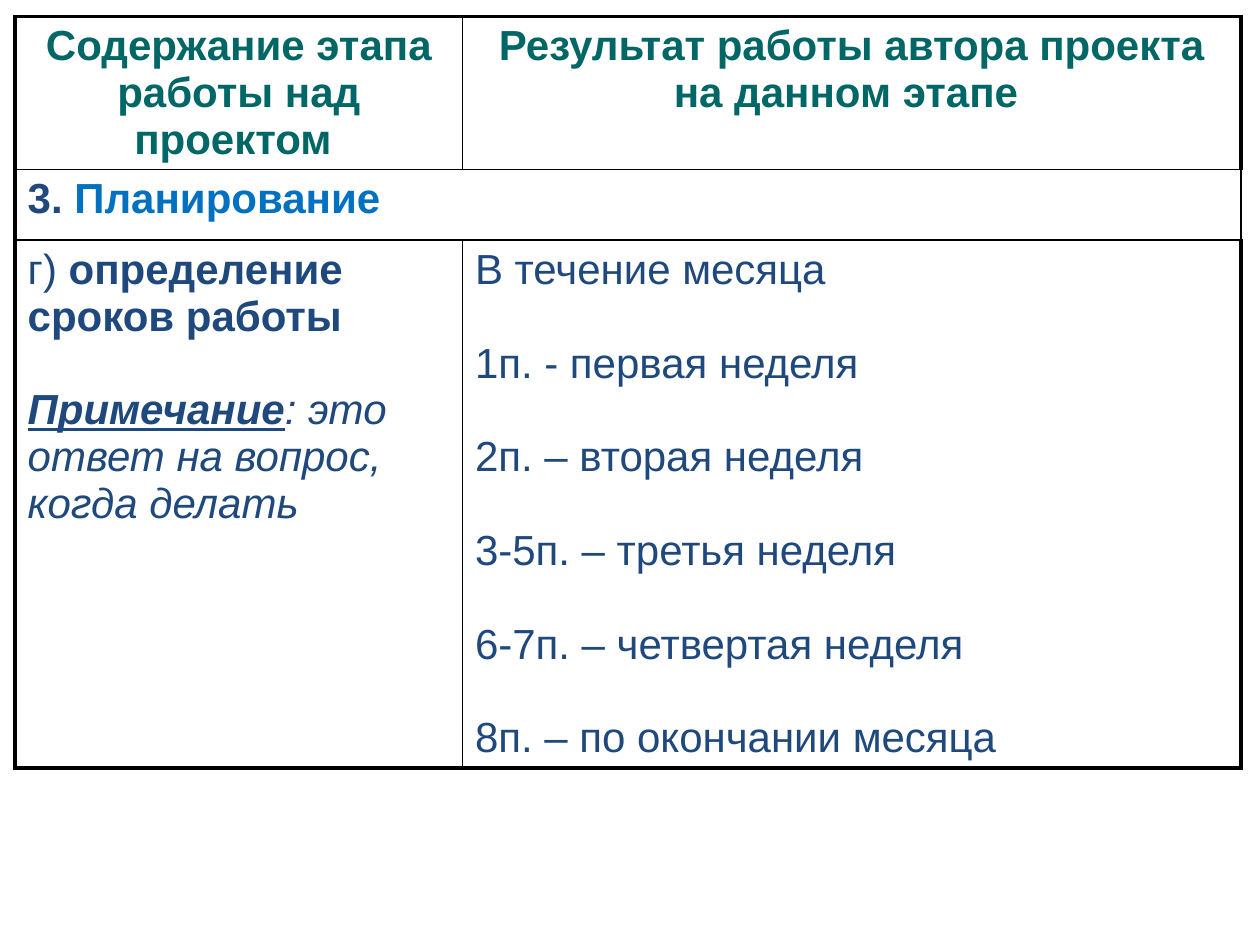
"""Build a slide with a table that plans the schedule of project work."""
from lxml import etree
from pptx import Presentation
from pptx.dml.color import RGBColor
from pptx.enum.text import PP_ALIGN
from pptx.oxml.ns import qn
from pptx.util import Inches, Pt

CENTER, LEFT = PP_ALIGN.CENTER, PP_ALIGN.LEFT
COLORS = {"head": "006666", "text": "1F497D", "accent": "0070C0", "line": "000000"}
COLS = [3.55, 6.18]
ROWS = [1.21, 0.56, 4.19]
THIN, THICK = 1, 2.25
BLANK_LINE = 26.8


def add_text(p, text, color="text", bold=False, italic=False, underline=False):
    r = p.add_run()
    r.text = text
    f = r.font
    f.name, f.size = "Arial", Pt(24)
    f.bold, f.italic, f.underline = bold, italic, underline
    f.color.rgb = RGBColor.from_string(COLORS[color])


def set_border(cell, index, side, width):
    ln = etree.Element(qn(f"a:ln{side}"), w=str(Pt(width)))
    fill = etree.SubElement(ln, qn("a:solidFill"))
    etree.SubElement(fill, qn("a:srgbClr"), val=COLORS["line"])
    cell._tc.get_or_add_tcPr().insert(index, ln)


prs = Presentation()
prs.slide_width, prs.slide_height = Inches(10), Inches(7.5)
s = prs.slides.add_slide(prs.slide_layouts[6])
table = s.shapes.add_table(
    len(ROWS), len(COLS), Inches(0.12), Inches(0.13),
    Inches(sum(COLS)), Inches(sum(ROWS))).table
table.first_row = table.horz_banding = False
for col, width in zip(table.columns, COLS):
    col.width = Inches(width)
for row, height in zip(table.rows, ROWS):
    row.height = Inches(height)

for i in range(len(ROWS)):
    for j in range(len(COLS)):
        cell = table.cell(i, j)
        cell.fill.background()
        outer = {"L": j == 0, "R": j == len(COLS) - 1,
                 "T": i == 0, "B": i == len(ROWS) - 1}
        for index, (side, edge) in enumerate(outer.items()):
            set_border(cell, index, side, THICK if edge else THIN)
table.cell(1, 0).merge(table.cell(1, 1))

bold = {"bold": True}
head = {"color": "head", "bold": True}
schedule = ["В течение месяца", "1п. - первая неделя", "2п. – вторая неделя",
            "3-5п. – третья неделя", "6-7п. – четвертая неделя",
            "8п. – по окончании месяца"]
content = {
    (0, 0): [[("Содержание этапа работы над проектом ", head)]],
    (0, 1): [[("Результат работы автора проекта на данном этапе ", head)]],
    (1, 0): [[("3.", bold), (" Планирование", {"color": "accent", "bold": True})]],
    (2, 0): [[("г) ", {}), ("определение сроков работы", bold)],
             [("Примечание", {"bold": True, "italic": True, "underline": True}),
              (": это ответ на вопрос, когда делать", {"italic": True})]],
    (2, 1): [[(line, {})] for line in schedule],
}
for (i, j), paragraphs in content.items():
    tf = table.cell(i, j).text_frame
    for n, runs in enumerate(paragraphs):
        p = tf.add_paragraph() if n else tf.paragraphs[0]
        p.alignment = CENTER if i == 0 else LEFT
        p.space_before = Pt(BLANK_LINE if n else 0)
        for text, style in runs:
            add_text(p, text, **style)

prs.save("out.pptx")
